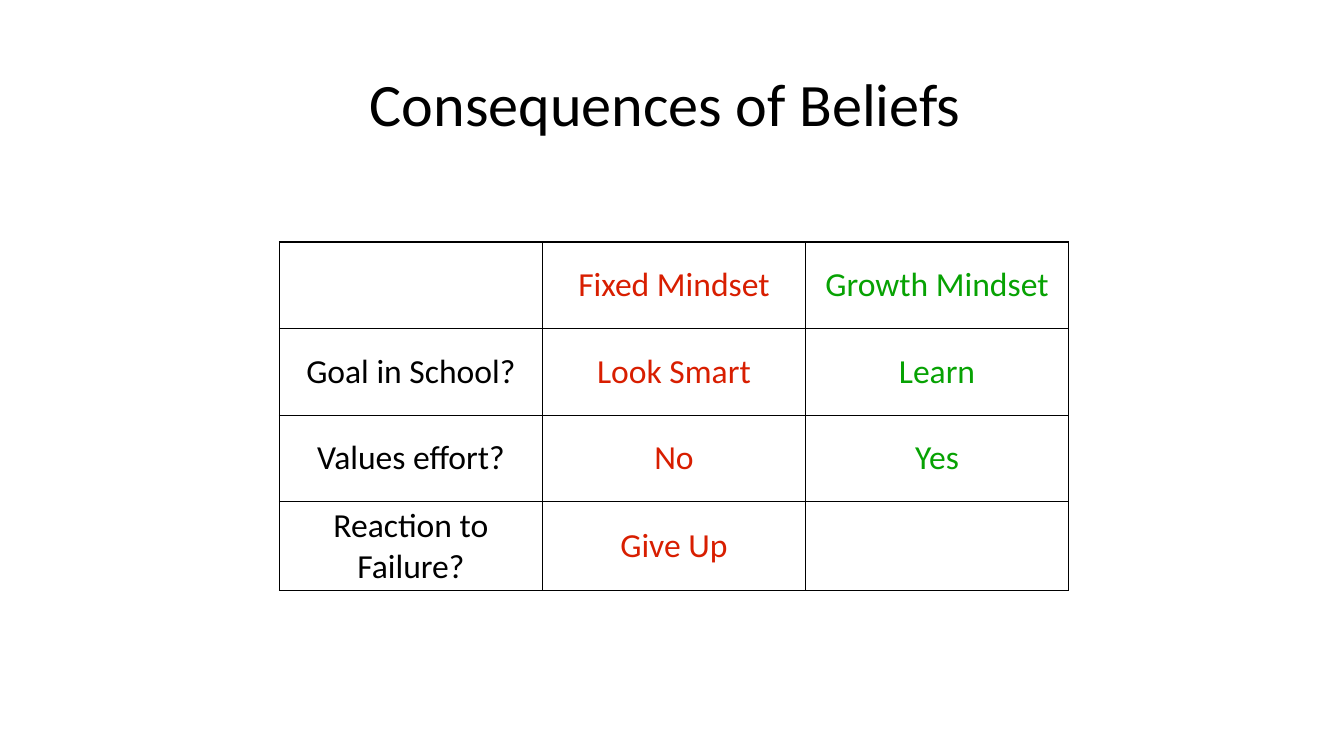
import pptx
import pptx.util
import pptx.dml.color
import pptx.enum.text
import pptx.oxml
import pptx.oxml.ns
from pptx.util import Cm

BLACK, RED, GREEN = "000000", "D81E00", "07A203"
COLUMN_COLORS = [BLACK, RED, GREEN]
MINDSETS = [
    ["", "Fixed Mindset", "Growth Mindset"],
    ["Goal in School?", "Look Smart", "Learn"],
    ["Values effort?", "No", "Yes"],
    ["Reaction to Failure?", "Give Up", ""],
]
ROW_HEIGHTS = [2.18, 2.18, 2.18, 2.24]


def write(frame, text, size=24, color=BLACK):
    """Put one centred line of Calibri into a text frame."""
    frame.word_wrap = True
    paragraph = frame.paragraphs[0]
    paragraph.alignment = pptx.enum.text.PP_ALIGN.CENTER
    run = paragraph.add_run()
    run.text = text
    run.font.name = "Calibri"
    run.font.size = pptx.util.Pt(size)
    run.font.color.rgb = pptx.dml.color.RGBColor.from_string(color)


def add_borders(cell, color=BLACK, points=1):
    properties = cell._tc.get_or_add_tcPr()
    for position, side in enumerate(["lnL", "lnR", "lnT", "lnB"]):
        border = pptx.oxml.parse_xml(
            f'<a:{side} {pptx.oxml.ns.nsdecls("a")} w="{pptx.util.Pt(points)}">'
            f'<a:solidFill><a:srgbClr val="{color}"/></a:solidFill></a:{side}>'
        )
        properties.insert(position, border)


deck = pptx.Presentation()
deck.slide_width, deck.slide_height = Cm(33.87), Cm(19.05)
slide = deck.slides.add_slide(deck.slide_layouts[6])

title = slide.shapes.add_textbox(Cm(5.94), Cm(0.18), Cm(21.64), Cm(4.78)).text_frame
title.margin_left = title.margin_right = title.margin_top = title.margin_bottom = 0
title.vertical_anchor = pptx.enum.text.MSO_ANCHOR.MIDDLE
write(title, "Consequences of Beliefs", size=43)

comparison = slide.shapes.add_table(
    len(MINDSETS), len(COLUMN_COLORS), Cm(7.04), Cm(6.1), Cm(19.89), Cm(sum(ROW_HEIGHTS))
).table
comparison.first_row = comparison.horz_banding = False
for column in comparison.columns:
    column.width = Cm(6.63)

for row, (height, answers) in enumerate(zip(ROW_HEIGHTS, MINDSETS)):
    comparison.rows[row].height = Cm(height)
    for col, (answer, color) in enumerate(zip(answers, COLUMN_COLORS)):
        cell = comparison.cell(row, col)
        cell.fill.background()
        cell.margin_left = cell.margin_right = cell.margin_top = cell.margin_bottom = Cm(0.1)
        cell.vertical_anchor = pptx.enum.text.MSO_ANCHOR.MIDDLE
        add_borders(cell)
        if answer:
            write(cell.text_frame, answer, color=color)

deck.save("out.pptx")
